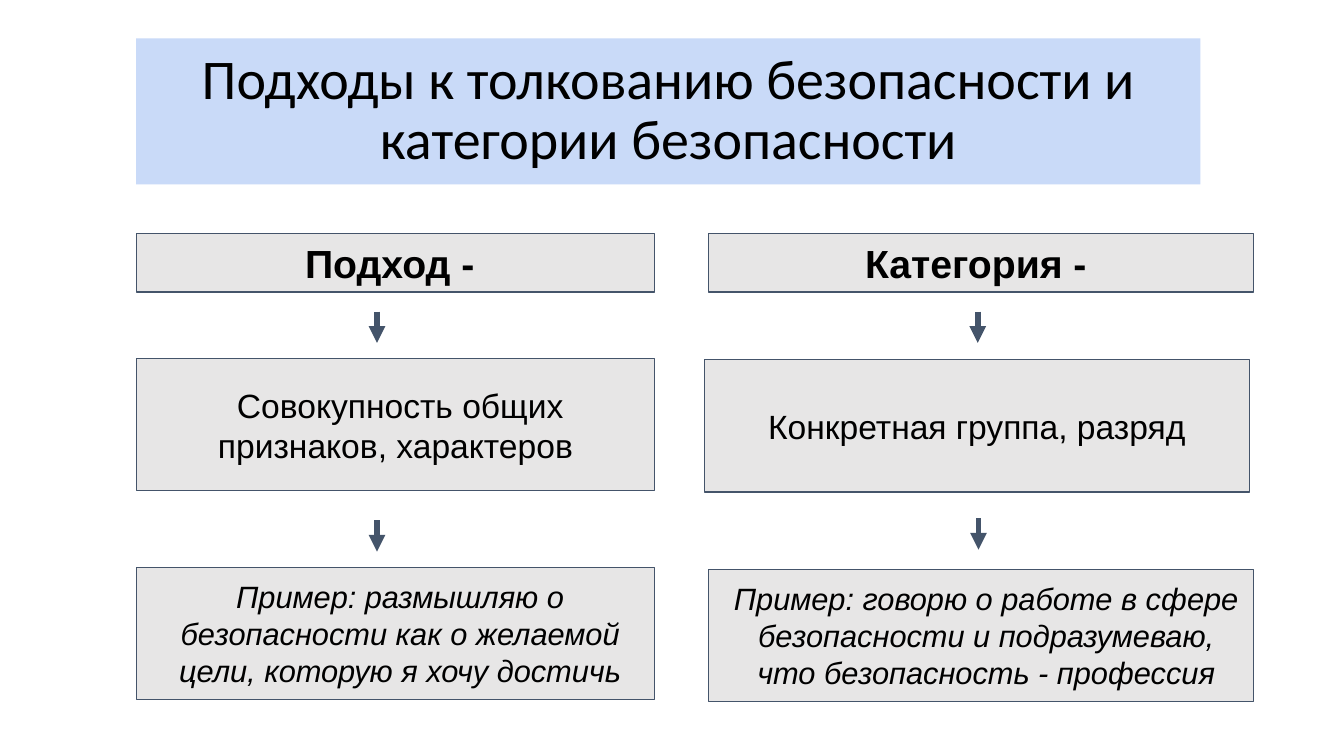
"""Build a slide contrasting the notions of approach and category of safety."""
from dataclasses import dataclass

from lxml.etree import SubElement
from pptx import Presentation
from pptx.dml.color import RGBColor
from pptx.enum.shapes import MSO_CONNECTOR, MSO_SHAPE
from pptx.enum.text import MSO_ANCHOR, MSO_AUTO_SIZE, PP_ALIGN
from pptx.oxml.ns import qn
from pptx.slide import Slide
from pptx.util import Cm, Length, Pt

BLACK = RGBColor(0x00, 0x00, 0x00)
PALE_BLUE = RGBColor(0xC9, 0xDA, 0xF8)
PALE_GREY = RGBColor(0xE7, 0xE6, 0xE6)
SLATE = RGBColor(0x44, 0x54, 0x6A)

LEFT = Cm(3.43)
LEFT_WIDTH = Cm(13.06)
RIGHT = Cm(17.86)
RIGHT_WIDTH = Cm(13.74)
TERM_TOP = Cm(5.89)
TERM_HEIGHT = Cm(1.47)
DETAIL_HEIGHT = Cm(3.33)
INSET = Cm(0.25)
ARROW_LENGTH = Cm(0.79)


@dataclass(frozen=True)
class Card:
    text: str
    left: Length
    top: Length
    width: Length
    height: Length
    size: int
    bold: bool = False
    italic: bool = False
    indented: bool = False


@dataclass(frozen=True)
class Arrow:
    x: Length
    top: Length


CARDS = [
    Card("Подход - ", LEFT, TERM_TOP, LEFT_WIDTH, TERM_HEIGHT, 28, bold=True),
    Card("Категория - ", RIGHT, TERM_TOP, RIGHT_WIDTH, TERM_HEIGHT, 28, bold=True),
    Card("Совокупность общих признаков, характеров ",
         LEFT, Cm(9.04), LEFT_WIDTH, DETAIL_HEIGHT, 24, indented=True),
    Card("Конкретная группа, разряд",
         Cm(17.75), Cm(9.07), RIGHT_WIDTH, DETAIL_HEIGHT, 24),
    Card("Пример: размышляю о безопасности как о желаемой цели, которую я хочу достичь",
         LEFT, Cm(14.3), LEFT_WIDTH, DETAIL_HEIGHT, 22, italic=True, indented=True),
    Card("Пример: говорю о работе в сфере безопасности и подразумеваю, "
         "что безопасность - профессия",
         RIGHT, Cm(14.35), RIGHT_WIDTH, DETAIL_HEIGHT, 22, italic=True, indented=True),
]

ARROWS = [
    Arrow(Cm(9.5), Cm(7.85)),
    Arrow(Cm(24.64), Cm(7.85)),
    Arrow(Cm(9.5), Cm(13.11)),
    Arrow(Cm(24.66), Cm(13.06)),
]


def add_title(slide: Slide, text: str) -> None:
    title = slide.shapes.title
    title.left, title.top = LEFT, Cm(0.97)
    title.width, title.height = Cm(26.82), Cm(3.68)
    title.fill.solid()
    title.fill.fore_color.rgb = PALE_BLUE
    frame = title.text_frame
    frame.text = text
    frame.word_wrap = True
    frame.auto_size = MSO_AUTO_SIZE.NONE
    frame.vertical_anchor = MSO_ANCHOR.MIDDLE
    heading = frame.paragraphs[0]
    heading.alignment = PP_ALIGN.CENTER
    heading.line_spacing = 0.9
    heading.font.name = "Calibri"
    heading.font.size = Pt(40)
    heading.font.color.rgb = BLACK


def add_card(slide: Slide, card: Card) -> None:
    panel = slide.shapes.add_shape(
        MSO_SHAPE.RECTANGLE, card.left, card.top, card.width, card.height)
    panel.shadow.inherit = False
    panel.fill.solid()
    panel.fill.fore_color.rgb = PALE_GREY
    panel.line.color.rgb = SLATE
    panel.line.width = Pt(0.75)
    frame = panel.text_frame
    frame.text = card.text
    frame.word_wrap = True
    frame.vertical_anchor = MSO_ANCHOR.MIDDLE
    frame.margin_left = frame.margin_right = INSET
    frame.margin_top = frame.margin_bottom = INSET
    statement = frame.paragraphs[0]
    statement.alignment = PP_ALIGN.CENTER
    if card.indented:
        properties = statement._p.get_or_add_pPr()
        properties.set("marL", str(INSET))
        properties.set("indent", "0")
    statement.font.name = "Arial"
    statement.font.size = Pt(card.size)
    statement.font.bold = card.bold
    statement.font.italic = card.italic
    statement.font.color.rgb = BLACK


def add_arrow(slide: Slide, arrow: Arrow) -> None:
    pointer = slide.shapes.add_connector(
        MSO_CONNECTOR.STRAIGHT, arrow.x, arrow.top, arrow.x, arrow.top + ARROW_LENGTH)
    pointer.line.color.rgb = SLATE
    pointer.line.width = Pt(4)
    SubElement(pointer.line._get_or_add_ln(), qn("a:tailEnd"), type="triangle")
    SubElement(pointer._element.spPr, qn("a:effectLst"))


def main() -> None:
    presentation = Presentation()
    presentation.slide_width = Cm(33.87)
    presentation.slide_height = Cm(19.05)
    slide = presentation.slides.add_slide(presentation.slide_layouts[5])
    add_title(slide, "Подходы к толкованию безопасности и категории безопасности")
    for card in CARDS:
        add_card(slide, card)
    for arrow in ARROWS:
        add_arrow(slide, arrow)
    presentation.save("out.pptx")


if __name__ == "__main__":
    main()
